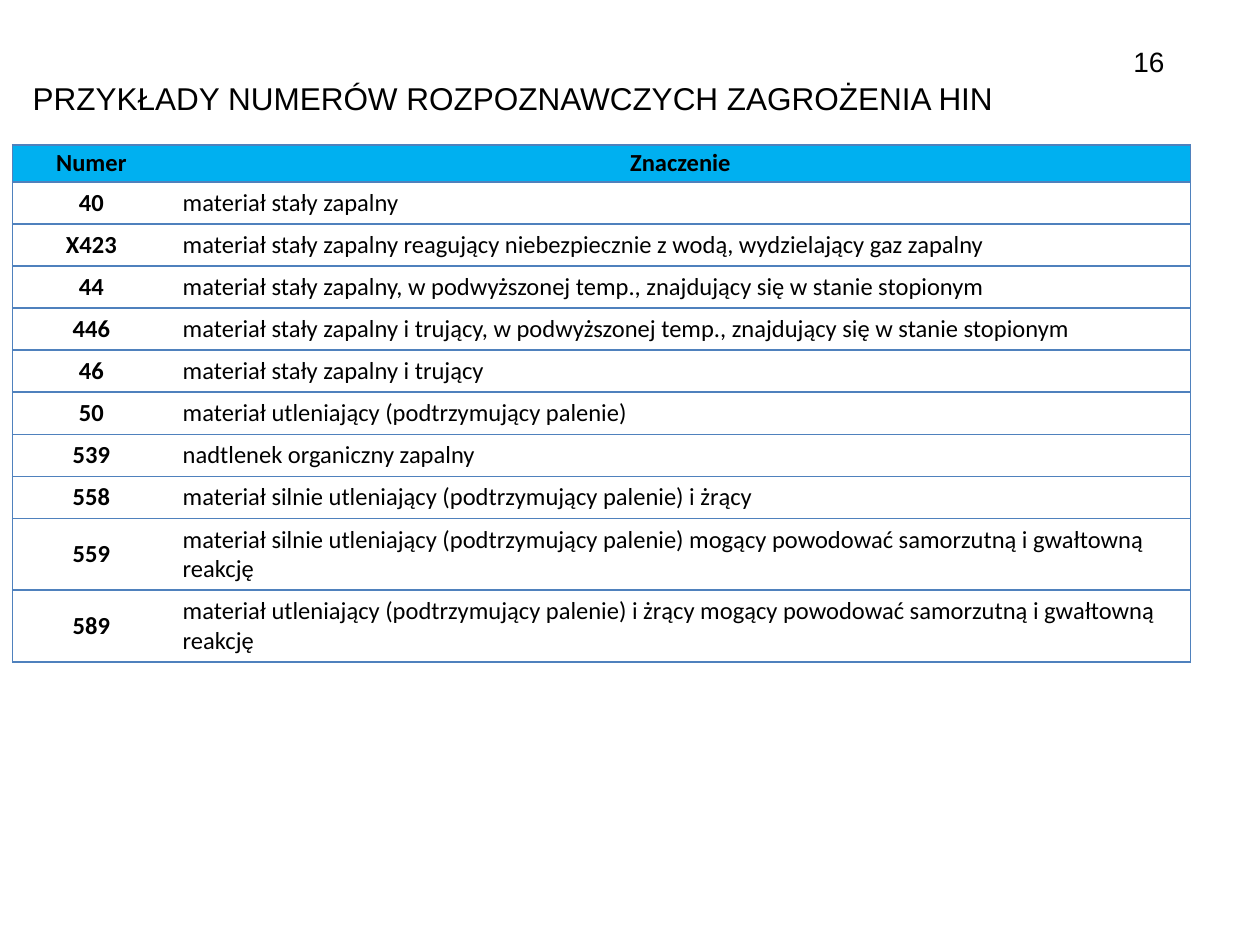
from pptx import Presentation
from pptx.dml.color import RGBColor
from pptx.enum.text import MSO_ANCHOR as Anchor, MSO_AUTO_SIZE as AutoSize, PP_ALIGN as Align
from pptx.oxml.ns import qn
from pptx.util import Inches, Pt
from lxml.etree import SubElement

WIDTH, HEIGHT = 10, 7.5
BLACK, WHITE, HEADER_BLUE, BORDER_BLUE = "000000", "FFFFFF", "00B0F0", "4F81BD"

HEADER = ("Numer", "Znaczenie")
HAZARDS = [
    ("40", "materiał stały zapalny"),
    ("X423", "materiał stały zapalny reagujący niebezpiecznie z wodą, wydzielający gaz zapalny"),
    ("44", "materiał stały zapalny, w podwyższonej temp., znajdujący się w stanie stopionym"),
    ("446", "materiał stały zapalny i trujący, w podwyższonej temp., znajdujący się w stanie stopionym"),
    ("46", "materiał stały zapalny i trujący"),
    ("50", "materiał utleniający (podtrzymujący palenie)"),
    ("539", "nadtlenek organiczny zapalny"),
    ("558", "materiał silnie utleniający (podtrzymujący palenie) i żrący"),
    ("559", "materiał silnie utleniający (podtrzymujący palenie) mogący powodować samorzutną "
            "i gwałtowną reakcję"),
    ("589", "materiał utleniający (podtrzymujący palenie) i żrący mogący powodować samorzutną "
            "i gwałtowną reakcję"),
]
HEADER_ROW, SINGLE_ROW, DOUBLE_ROW = 0.29, 0.33, 0.57
LINE_CAPACITY = 95


def color(value):
    return RGBColor.from_string(value)


class SlideBuilder:
    heading_font = "Arial"
    table_font = "Calibri"

    def __init__(self, deck):
        self.deck = deck
        self.slide = deck.slides.add_slide(deck.slide_layouts[5])

    def frame(self, left, top, width, height):
        across, down = self.deck.slide_width, self.deck.slide_height
        return [int(across * left), int(down * top), int(across * width), int(down * height)]

    def add_text(self, text_frame, text, size, font, align, bold=False):
        para = text_frame.paragraphs[0]
        para.alignment = align
        span = para.add_run()
        span.text = text
        span.font.size = Pt(size)
        span.font.name = font
        span.font.bold = bold
        span.font.color.rgb = color(BLACK)

    def title(self, text, *share):
        box = self.slide.shapes.title
        box.left, box.top, box.width, box.height = self.frame(*share)
        box.text_frame.auto_size = AutoSize.NONE
        box.text_frame.vertical_anchor = Anchor.TOP
        self.add_text(box.text_frame, text, 18, self.heading_font, Align.LEFT)

    def page_number(self, text, *share):
        box = self.slide.shapes.add_textbox(*self.frame(*share))
        box.text_frame.word_wrap = True
        box.text_frame.vertical_anchor = Anchor.MIDDLE
        self.add_text(box.text_frame, text, 16, self.heading_font, Align.RIGHT)

    def borders(self, cell, open_side):
        properties = cell._tc.get_or_add_tcPr()
        for side in ("lnL", "lnR", "lnT", "lnB"):
            line = SubElement(properties, qn(f"a:{side}"), w=str(Pt(1)))
            if side == open_side:
                SubElement(line, qn("a:noFill"))
            else:
                paint = SubElement(line, qn("a:solidFill"))
                SubElement(paint, qn("a:srgbClr"), val=BORDER_BLUE)

    def cell(self, cell, text, is_header, is_number):
        self.borders(cell, "lnR" if is_number else "lnL")
        cell.fill.solid()
        cell.fill.fore_color.rgb = color(HEADER_BLUE if is_header else WHITE)
        cell.vertical_anchor = Anchor.MIDDLE
        if is_header:
            cell.margin_left = cell.margin_right = Inches(0.06)
            cell.margin_top = cell.margin_bottom = Inches(0.03)
        strong = is_header or is_number
        self.add_text(cell.text_frame, text, 14, self.table_font,
                      Align.CENTER if strong else Align.LEFT, strong)

    def table(self, header, records, column_widths, *share):
        rows = [header, *records]
        table = self.slide.shapes.add_table(len(rows), len(header), *self.frame(*share)).table
        table.first_row = table.horz_banding = False
        for column, width in zip(table.columns, column_widths):
            column.width = Inches(width)
        for row_index, record in enumerate(rows):
            is_header = row_index == 0
            is_long = len(record[1]) > LINE_CAPACITY
            height = HEADER_ROW if is_header else DOUBLE_ROW if is_long else SINGLE_ROW
            table.rows[row_index].height = Inches(height)
            for column_index, text in enumerate(record):
                self.cell(table.cell(row_index, column_index), text, is_header, column_index == 0)


def main():
    deck = Presentation()
    deck.slide_width, deck.slide_height = Inches(WIDTH), Inches(HEIGHT)
    page = SlideBuilder(deck)
    page.title("PRZYKŁADY NUMERÓW ROZPOZNAWCZYCH ZAGROŻENIA HIN",
               0.16 / WIDTH, 0.58 / HEIGHT, 8.12 / WIDTH, 0.73 / HEIGHT)
    page.page_number("16", 0.7, 0.23 / HEIGHT, 2.34 / WIDTH, 0.52 / HEIGHT)
    page.table(HEADER, HAZARDS, (1.25, 8.1),
               0.01, 1.15 / HEIGHT, 9.35 / WIDTH, 4.09 / HEIGHT)
    deck.save("out.pptx")


if __name__ == "__main__":
    main()
